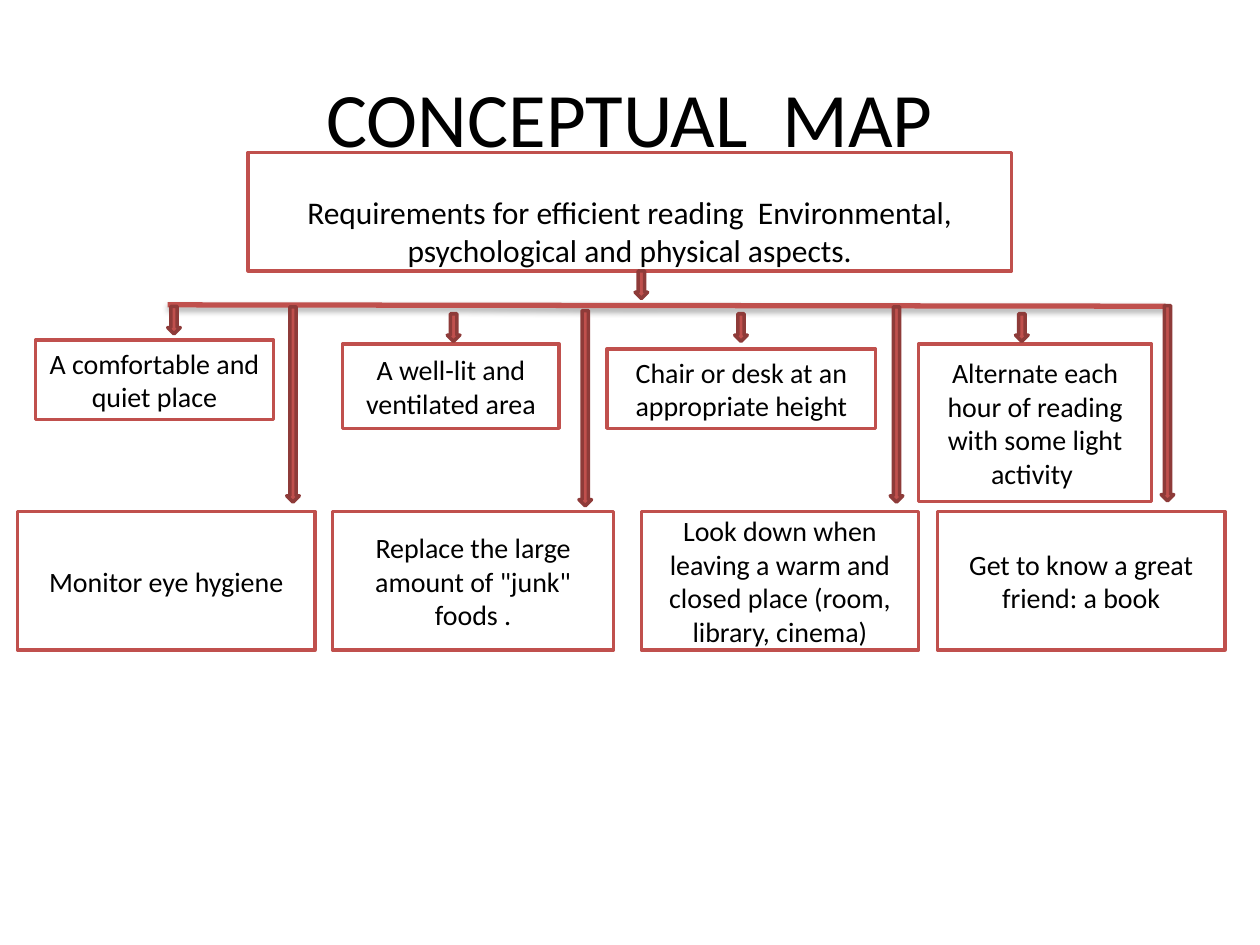
"""Build the conceptual map slide on the requirements for efficient reading."""
from lxml import etree
from pptx import Presentation
from pptx.dml.color import RGBColor
from pptx.enum.shapes import MSO_CONNECTOR, MSO_SHAPE
from pptx.enum.text import MSO_ANCHOR, PP_ALIGN
from pptx.oxml import parse_xml
from pptx.oxml.ns import nsdecls, qn
from pptx.util import Pt

RECT, ARROW = MSO_SHAPE.RECTANGLE, MSO_SHAPE.RIGHT_ARROW
STRAIGHT = MSO_CONNECTOR.STRAIGHT
MIDDLE, CENTER = MSO_ANCHOR.MIDDLE, PP_ALIGN.CENTER


class Theme:
    font = "Calibri"
    ink = RGBColor(0, 0, 0)
    paper = RGBColor(255, 255, 255)
    red = RGBColor(0xC0, 0x50, 0x4D)
    dark = RGBColor(0x8E, 0x3B, 0x39)
    title, head, body = Pt(44), Pt(18), Pt(16)
    thin, thick = Pt(2), Pt(3)


def write(shape, text, size):
    frame = shape.text_frame
    frame.word_wrap = True
    frame.vertical_anchor = MIDDLE
    para = frame.paragraphs[0]
    para.alignment = CENTER
    run = para.add_run()
    run.text = text
    run.font.name = Theme.font
    run.font.size = size
    run.font.color.rgb = Theme.ink


def draw(kind, left, top, width, height, fill, edge):
    shape = shapes.add_shape(kind, Pt(left), Pt(top), Pt(width), Pt(height))
    shape.shadow.inherit = False
    shape.fill.solid()
    shape.fill.fore_color.rgb = fill
    shape.line.color.rgb = edge
    shape.line.width = Theme.thin
    return shape


deck = Presentation()
deck.slide_width, deck.slide_height = Pt(720), Pt(540)
shapes = deck.slides.add_slide(deck.slide_layouts[6]).shapes

title = shapes.add_textbox(Pt(36), Pt(21.6), Pt(648), Pt(90))
write(title, "CONCEPTUAL  MAP", Theme.title)

head = draw(RECT, 141.8, 87.1, 436.3, 67.7, Theme.paper, Theme.red)
write(head, "Requirements for efficient reading  Environmental, psychological and physical aspects.", Theme.head)
head.text_frame.margin_top = Pt(22)
head.text_frame.margin_bottom = Pt(0)

needs = [
    (20.2, 194.4, 136.1, 45.4, "A comfortable and quiet place"),
    (195.8, 196.6, 123.8, 48.2, "A well-lit and ventilated area"),
    (347, 199.4, 153.4, 45.4, "Chair or desk at an appropriate height"),
    (524.9, 196.6, 133.2, 90, "Alternate each hour of reading with some light activity "),
    (10.1, 292.3, 169.9, 79.2, "Monitor eye hygiene"),
    (190.1, 292.3, 160.6, 79.2, 'Replace the large amount of "junk" foods .'),
    (366.5, 292.3, 158.4, 79.2, "Look down when leaving a warm and closed place (room, library, cinema)"),
    (535.7, 292.3, 164.2, 79.2, "Get to know a great friend: a book"),
]
for left, top, width, height, text in needs:
    box = draw(RECT, left, top, width, height, Theme.paper, Theme.red)
    write(box, text, Theme.body)

bar = shapes.add_connector(STRAIGHT, Pt(95.8), Pt(174.2), Pt(666), Pt(175))
bar.line.color.rgb = Theme.red
bar.line.width = Theme.thick
glow = etree.SubElement(bar._element.spPr, qn("a:effectLst"))
glow.append(parse_xml(
    f'<a:outerShdw {nsdecls("a")} blurRad="{Pt(3.1)}" dist="{Pt(1.8)}" dir="5400000" rotWithShape="0">'
    f'<a:srgbClr val="{Theme.ink}"><a:alpha val="35000"/></a:srgbClr></a:outerShdw>'))

girth = 7.2
arrows = {
    111.6: [(167.4, 175.3), (334.4, 177.5), (512.3, 175.3), (667.1, 174.6)],
    15.8: [(99.4, 175), (259.2, 179.3), (423.4, 179.3), (583.9, 179.3), (366.5, 154.8)],
}
for size, spots in arrows.items():
    for mid, top in spots:
        arrow = draw(ARROW, mid - size / 2, top + (size - girth) / 2, size, girth, Theme.red, Theme.dark)
        arrow.rotation = 90

deck.save("out.pptx")
